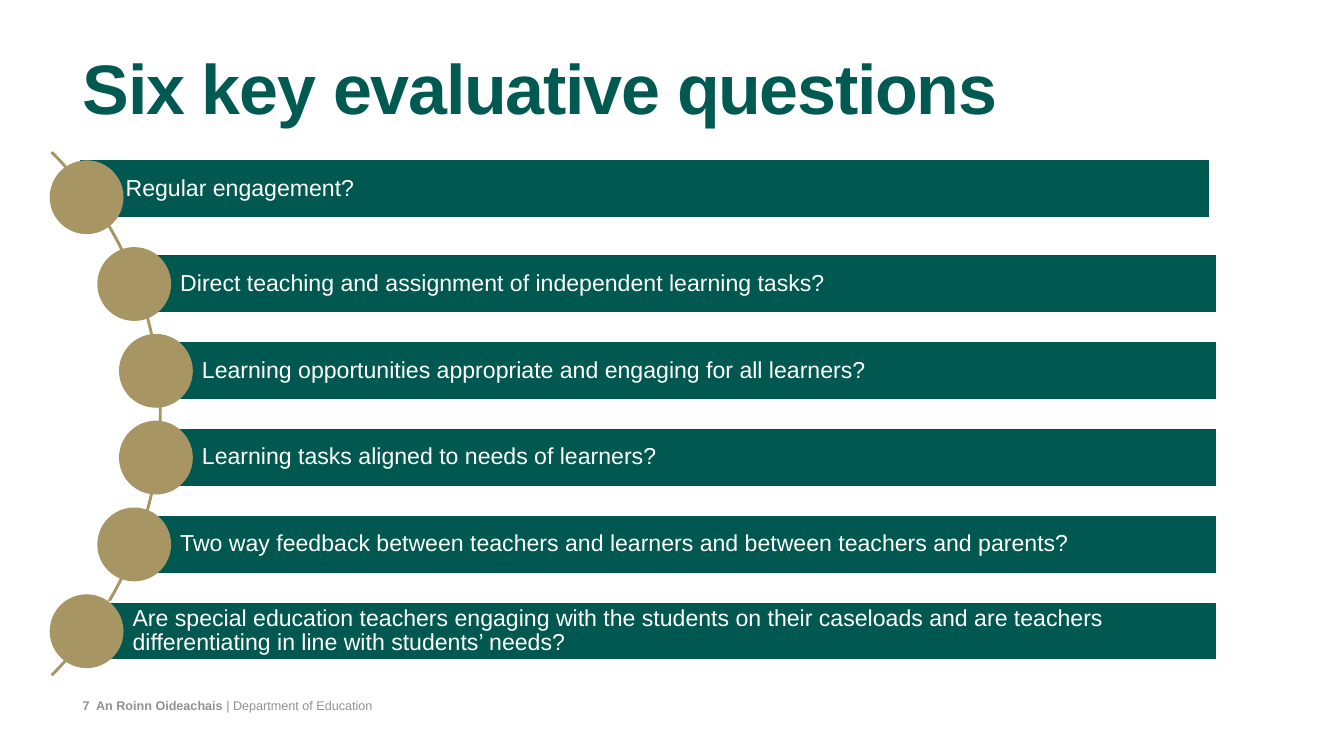
from dataclasses import dataclass

from pptx import Presentation
from pptx.dml.color import RGBColor
from pptx.enum import shapes, text
from pptx.util import Pt

COLORS = {
    "title": "005A52",
    "bar": "005850",
    "gold": "A79563",
    "white": "FFFFFF",
    "footer": "929292",
}
FONT = "Arial"
ROW_STEP = 124
FIRST_CIRCLE_TOP = 230
CIRCLE_SIZE = 103.5
BAR_HEIGHT = 83
BAR_RIGHT = 1738
BAR_OFFSET_X = 52
BAR_OFFSET_Y = 10


@dataclass
class Box:
    left: float
    top: float
    width: float
    height: float


@dataclass
class Question:
    wording: str
    circle_left: float
    bar_shift_x: float = 0
    bar_shift_y: float = 0


QUESTIONS = [
    Question("Regular engagement?", 72, -10, -12),
    Question("Direct teaching and assignment of independent learning tasks?", 140),
    Question("Learning opportunities appropriate and engaging for all learners?", 171),
    Question("Learning tasks aligned to needs of learners?", 171),
    Question(
        "Two way feedback between teachers and learners and between teachers and parents?",
        140,
    ),
    Question(
        "Are special education teachers engaging with the students on their caseloads "
        "and are teachers differentiating in line with students’ needs?",
        72,
    ),
]


def rgb(name: str) -> RGBColor:
    return RGBColor.from_string(COLORS[name])


def lengths(box: Box) -> tuple:
    return Pt(box.left), Pt(box.top), Pt(box.width), Pt(box.height)


def set_frame(frame, insets: tuple, anchor, wrap: bool = True) -> None:
    frame.margin_left, frame.margin_top, frame.margin_right, frame.margin_bottom = map(
        Pt, insets
    )
    frame.vertical_anchor = anchor
    frame.word_wrap = wrap


def add_run(paragraph, wording: str, size: float, color: str, bold: bool = False):
    run = paragraph.add_run()
    run.text = wording
    run.font.name = FONT
    run.font.size = Pt(size)
    run.font.bold = bold
    run.font.color.rgb = rgb(color)
    return run


def add_figure(slide, preset, box: Box, fill: str, line: str):
    figure = slide.shapes.add_shape(preset, *lengths(box))
    figure.shadow.inherit = False
    figure.fill.solid()
    figure.fill.fore_color.rgb = rgb(fill)
    figure.line.color.rgb = rgb(line)
    figure.line.width = Pt(2)
    return figure


def add_title(slide) -> None:
    title = slide.shapes.add_textbox(*lengths(Box(114, 74, 1521, 180)))
    set_frame(title.text_frame, (4, 12.5, 4, 4), text.MSO_ANCHOR.TOP)
    heading = title.text_frame.paragraphs[0]
    heading.line_spacing = 0.8
    run = add_run(heading, "Six key evaluative questions", 100, "title", True)
    run.font._element.set("spc", "-180")


def add_footer(slide) -> None:
    footer = slide.shapes.add_textbox(*lengths(Box(114, 993, 444, 30)))
    set_frame(footer.text_frame, (4, 4, 4, 4), text.MSO_ANCHOR.MIDDLE, False)
    department = footer.text_frame.paragraphs[0]
    add_run(department, "7  An Roinn Oideachais ", 18, "footer", True)
    add_run(department, "| Department of Education", 18, "footer")


def add_arc(slide) -> None:
    arc = add_figure(
        slide, shapes.MSO_SHAPE.BLOCK_ARC, Box(-827, 62.5, 1057, 1057), "gold", "gold"
    )
    for index, value in enumerate((189, 27, 0.002)):
        arc.adjustments[index] = value


def add_question(slide, question: Question, row: int) -> None:
    circle_top = FIRST_CIRCLE_TOP + row * ROW_STEP
    bar_left = question.circle_left + BAR_OFFSET_X
    bar_box = Box(
        bar_left + question.bar_shift_x,
        circle_top + BAR_OFFSET_Y + question.bar_shift_y,
        BAR_RIGHT - bar_left,
        BAR_HEIGHT,
    )
    bar = add_figure(slide, shapes.MSO_SHAPE.RECTANGLE, bar_box, "bar", "white")
    set_frame(bar.text_frame, (65.5, 6.5, 6.5, 6.5), text.MSO_ANCHOR.MIDDLE)
    wording = bar.text_frame.paragraphs[0]
    wording.alignment = text.PP_ALIGN.LEFT
    wording.line_spacing = 0.9
    add_run(wording, question.wording, 33, "white")
    circle_box = Box(question.circle_left, circle_top, CIRCLE_SIZE, CIRCLE_SIZE)
    add_figure(slide, shapes.MSO_SHAPE.OVAL, circle_box, "gold", "gold")


def main() -> None:
    deck = Presentation()
    deck.slide_width, deck.slide_height = Pt(1920.24), Pt(1080)
    slide = deck.slides.add_slide(deck.slide_layouts[6])
    add_footer(slide)
    add_title(slide)
    add_arc(slide)
    for row, question in enumerate(QUESTIONS):
        add_question(slide, question, row)
    deck.save("out.pptx")


if __name__ == "__main__":
    main()
